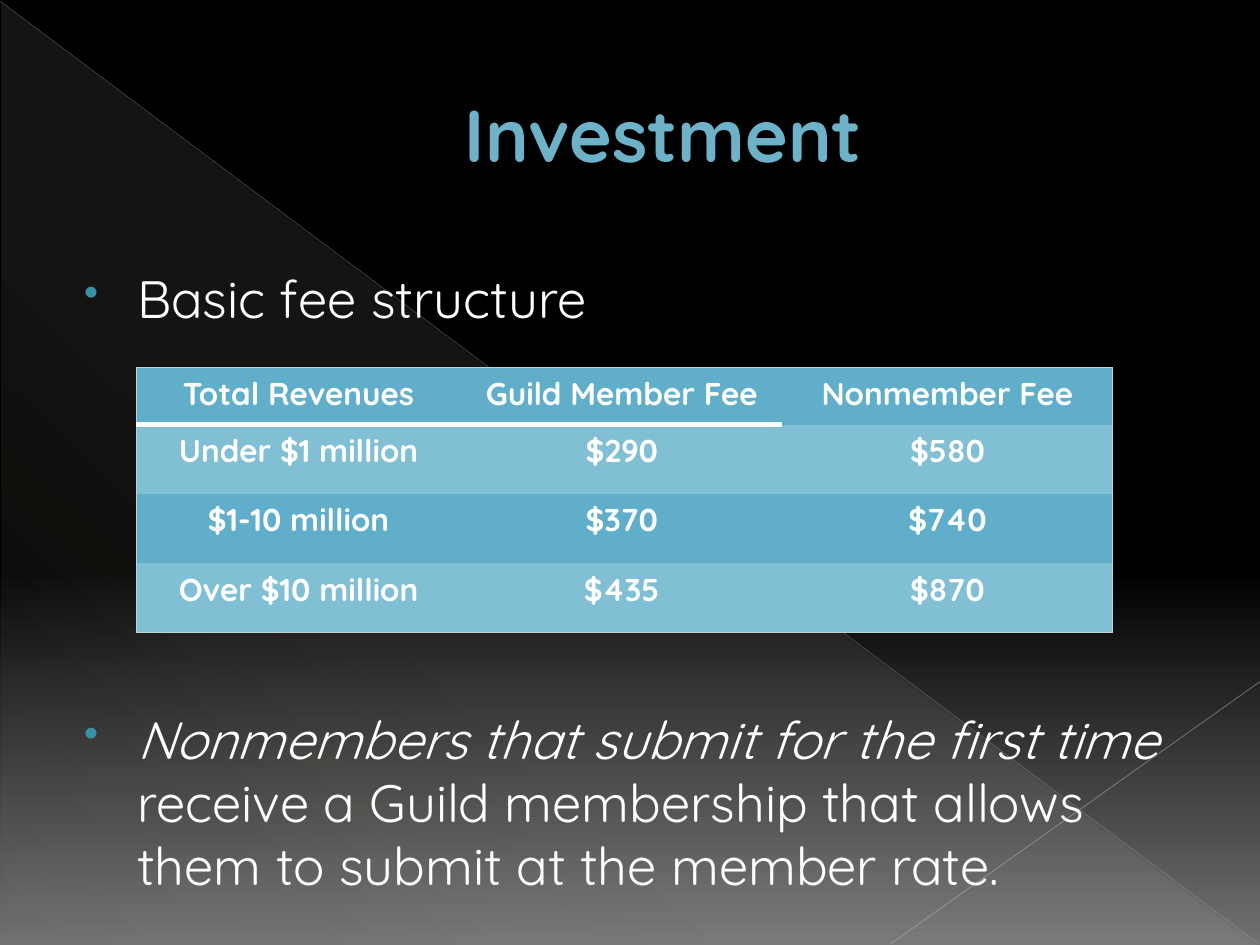
from lxml import etree
from pptx import Presentation
from pptx.dml.color import RGBColor
from pptx.enum.shapes import MSO_CONNECTOR, MSO_SHAPE
from pptx.enum.text import MSO_ANCHOR, PP_ALIGN
from pptx.oxml.ns import qn
from pptx.util import Inches, Pt

FONT = "Quicksand"
COLORS = {
    "black": "000000", "grey": "707070", "sand": "E7DEC9",
    "long_line": "B8B8B8", "short_line": "C0C0C0",
    "title": "6EB2C9", "bullet": "3891A7", "white": "FFFFFF",
    "row_dark": "60AECA", "row_light": "80BFD4", "border": "BCD3DC",
}
FEES = [
    ["Total Revenues", "Guild Member Fee", "Nonmember Fee"],
    ["Under $1 million", "$290", "$580"],
    ["$1-10 million", "$370", "$740"],
    ["Over $10 million", "$435", "$870"],
]
COL_WIDTHS = [2.58, 2.55, 2.62]
ROW_HEIGHTS = [0.45, 0.55, 0.55, 0.55]


def rgb(name):
    return RGBColor.from_string(COLORS[name])


def add_color(parent, name, alpha=100):
    clr = etree.SubElement(parent, qn("a:srgbClr"), val=COLORS[name])
    if alpha < 100:
        etree.SubElement(clr, qn("a:alpha"), val=str(alpha * 1000))


def set_gradient(owner, fill, stops, angle):
    """Stops are (position, colour, opacity), in percent."""
    fill.gradient()
    grad = owner.find(".//" + qn("a:gradFill"))
    for child in list(grad):
        grad.remove(child)
    gs_list = etree.SubElement(grad, qn("a:gsLst"))
    for pos, name, alpha in stops:
        gs = etree.SubElement(gs_list, qn("a:gs"), pos=str(pos * 1000))
        add_color(gs, name, alpha)
    etree.SubElement(grad, qn("a:lin"), ang=str(angle * 60000), scaled="0")


def add_line(s, start, end, name, width, alpha):
    line = s.shapes.add_connector(MSO_CONNECTOR.STRAIGHT,
                                  *map(Inches, start + end))
    line.line.width = Pt(width)
    line.line.color.rgb = rgb(name)
    clr = line._element.find(".//" + qn("a:ln")).find(".//" + qn("a:srgbClr"))
    etree.SubElement(clr, qn("a:alpha"), val=str(alpha * 1000))
    etree.SubElement(line._element.spPr, qn("a:effectLst"))


def style_font(p, size, name, bold=False):
    p.font.name = FONT
    p.font.size = Pt(size)
    p.font.bold = bold
    p.font.color.rgb = rgb(name)


def add_text_box(s, left, top, width, height):
    tf = s.shapes.add_textbox(*map(Inches, (left, top, width, height))).text_frame
    tf.word_wrap = True
    return tf


def add_title(s, text):
    tf = add_text_box(s, 0.5, 0.29, 9, 1.53)
    tf.vertical_anchor = MSO_ANCHOR.MIDDLE
    p = tf.paragraphs[0]
    p.text = text
    p.alignment = PP_ALIGN.CENTER
    p._p.get_or_add_pPr().set("marL", str(Inches(0.53)))
    style_font(p, 42, "title", bold=True)


def add_bullet(s, top, height, runs):
    """Runs are (text, italic)."""
    p = add_text_box(s, 0.5, top, 9, height).paragraphs[0]
    for text, italic in runs:
        r = p.add_run()
        r.text = text
        r.font.italic = italic
    style_font(p, 30, "white")
    pPr = p._p.get_or_add_pPr()
    pPr.set("marL", str(Inches(0.49)))
    pPr.set("indent", str(Inches(-0.42)))
    marks = [etree.Element(qn("a:buClr")),
             etree.Element(qn("a:buSzPct"), val="80000"),
             etree.Element(qn("a:buChar"), char="•")]
    add_color(marks[0], "bullet")
    for i, mark in enumerate(marks):
        pPr.insert(i, mark)


def set_borders(cell, borders):
    """Borders map a side to (colour, width); other sides get no line."""
    tcPr = cell._tc.get_or_add_tcPr()
    for i, side in enumerate(("lnL", "lnR", "lnT", "lnB")):
        name, width = borders.get(side, (None, 0))
        ln = etree.Element(qn("a:" + side), w=str(Pt(width)))
        if name:
            add_color(etree.SubElement(ln, qn("a:solidFill")), name)
        else:
            etree.SubElement(ln, qn("a:noFill"))
        tcPr.insert(i, ln)


def cell_borders(row, col):
    edge = ("border", 0.75)
    last_row, last_col = len(FEES) - 1, len(COL_WIDTHS) - 1
    on_edge = {"lnL": col == 0, "lnR": col == last_col,
               "lnT": row == 0, "lnB": row == last_row}
    borders = {side: edge for side, outer in on_edge.items() if outer}
    # The rule under the header stops before the last column
    if col < last_col and row < 2:
        borders["lnB" if row == 0 else "lnT"] = ("white", 3)
    return borders


def add_fee_table(s):
    frame = s.shapes.add_table(len(FEES), len(COL_WIDTHS), Inches(1.08),
                               Inches(2.92), Inches(sum(COL_WIDTHS)),
                               Inches(sum(ROW_HEIGHTS)))
    table = frame.table
    for col, width in zip(table.columns, COL_WIDTHS):
        col.width = Inches(width)
    for i, (values, height) in enumerate(zip(FEES, ROW_HEIGHTS)):
        table.rows[i].height = Inches(height)
        for j, value in enumerate(values):
            cell = table.cell(i, j)
            cell.fill.solid()
            cell.fill.fore_color.rgb = rgb("row_light" if i % 2 else "row_dark")
            set_borders(cell, cell_borders(i, j))
            p = cell.text_frame.paragraphs[0]
            p.text = value
            p.alignment = PP_ALIGN.CENTER
            style_font(p, 18, "white", bold=True)


def add_backdrop(s):
    set_gradient(s._element, s.background.fill,
                 [(0, "black", 100), (60, "black", 100), (100, "grey", 100)], 90)
    sp = s.shapes.add_shape(MSO_SHAPE.RIGHT_TRIANGLE,
                            *map(Inches, (0.01, 0.02, 9.98, 7.48)))
    sp.shadow.inherit = False
    sp.line.fill.background()
    set_gradient(sp._element, sp.fill,
                 [(0, "sand", 10), (70, "sand", 8), (100, "sand", 1)], 133)
    add_line(s, (0, 0.01), (9.99, 7.49), "long_line", 0.39, 35)
    add_line(s, (10, 5.41), (7.07, 7.49), "short_line", 0.47, 45)


def main():
    prs = Presentation()
    prs.slide_width, prs.slide_height = Inches(10), Inches(7.5)
    s = prs.slides.add_slide(prs.slide_layouts[6])

    # Background and decoration
    add_backdrop(s)

    # Title and bullets
    add_title(s, "Investment")
    add_bullet(s, 2.06, 0.6, [("Basic fee structure", False)])
    add_bullet(s, 5.56, 1.6, [
        ("Nonmembers that submit for the first time ", True),
        ("receive a Guild membership that allows them to submit "
         "at the member rate.", False),
    ])

    # Fees
    add_fee_table(s)
    prs.save("out.pptx")


if __name__ == "__main__":
    main()
